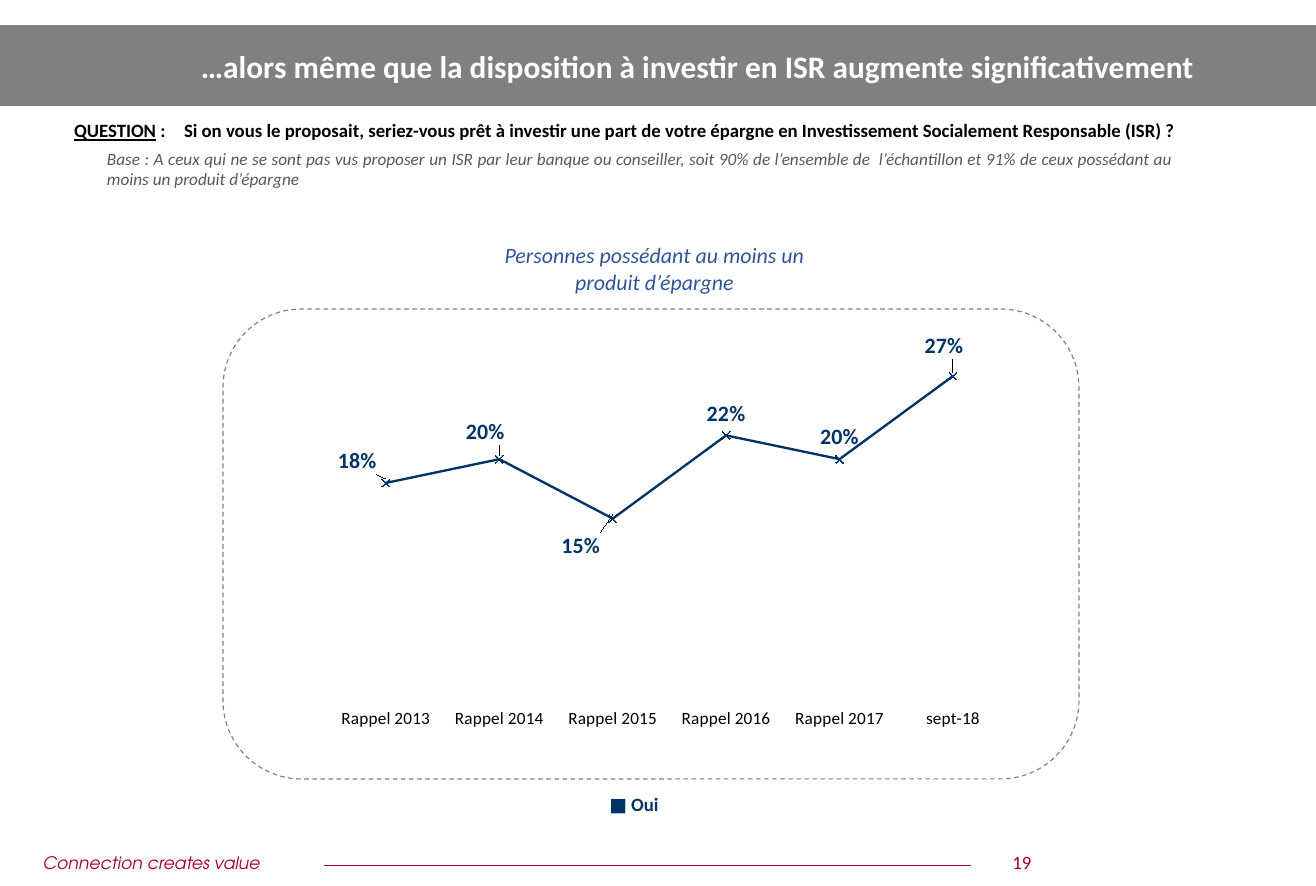
from lxml import etree
from pptx import Presentation
from pptx.chart.data import CategoryChartData
from pptx.dml.color import RGBColor
from pptx.enum.chart import (XL_CHART_TYPE, XL_LABEL_POSITION, XL_MARKER_STYLE,
                             XL_TICK_MARK)
from pptx.enum.dml import MSO_LINE
from pptx.enum.shapes import MSO_CONNECTOR, MSO_SHAPE
from pptx.enum.text import MSO_ANCHOR, PP_ALIGN
from pptx.oxml import parse_xml
from pptx.oxml.ns import nsdecls, qn
from pptx.util import Pt

PX = 8121  # EMU in one px
NAVY, RED, GREY, BLACK = "003366", "A50021", "808080", "000000"
LEFT, CENTER, JUSTIFY = PP_ALIGN.LEFT, PP_ALIGN.CENTER, PP_ALIGN.JUSTIFY

TITLE = "…alors même que la disposition à investir en ISR augmente significativement"
QUESTION = (" :\tSi on vous le proposait, seriez-vous prêt à investir une part de votre "
            "épargne en Investissement Socialement Responsable (ISR) ?")
BASE = ("Base : A ceux qui ne se sont pas vus proposer un ISR par leur banque ou conseiller, "
        "soit 90% de l’ensemble de  l’échantillon et 91% de ceux possédant au moins un "
        "produit d’épargne")
OUI = {"Rappel 2013": 0.18, "Rappel 2014": 0.20, "Rappel 2015": 0.15,
       "Rappel 2016": 0.22, "Rappel 2017": 0.20, "sept-18": 0.27}
# Point index: shift of its label from the place above the point, px
LABEL_SHIFTS = {0: (-29, 0), 1: (-14, -5), 2: (-32, 49), 5: (-9, -8)}

BAND = (0, 25, 1316, 81)
CHART = (239, 312, 820, 475)
PLOT = {"x": 0.11, "y": 0.06, "w": 0.83, "h": 0.75}
FRAME = (223, 309, 856, 470)

# text runs, box, format
TEXTS = [
    (["Connection creates value"], (32, 846, 347, 33),
     dict(size=11, color=RED, italic=True, name="TeX Gyre Adventor")),
    (["19"], (987, 845, 70, 34), dict(size=12, color=RED, align=CENTER)),
    (["QUESTION", QUESTION], (64, 114, 1201, 32),
     dict(size=12, bold=True, align=JUSTIFY, insets=(10, 5, 41, 5), hanging=110,
          underline_first=True)),
    ([BASE], (107, 148, 1067, 42),
     dict(size=11, color="595959", italic=True, align=JUSTIFY, insets=(0, 0, 0, 0))),
    (["Personnes possédant au moins un produit d’épargne"], (482, 236, 345, 64),
     dict(size=14, color="2F5597", italic=True, align=CENTER)),
    (["■ Oui"], (399, 787, 470, 34), dict(size=12, color=NAVY, bold=True, align=CENTER)),
]


def px(*values):
    return [round(v * PX) for v in values]


def rgb(value):
    return RGBColor.from_string(value)


def set_font(font, size, color=BLACK, bold=False, italic=False, name="Calibri"):
    font.size, font.bold, font.italic, font.name = Pt(size), bold, italic, name
    font.color.rgb = rgb(color)


def write(sp, runs, align=LEFT, anchor=MSO_ANCHOR.TOP, insets=(11, 6, 11, 6),
          hanging=0, underline_first=False, **font):
    tf = sp.text_frame
    tf.word_wrap = True
    tf.vertical_anchor = anchor
    tf.margin_left, tf.margin_top, tf.margin_right, tf.margin_bottom = px(*insets)
    p = tf.paragraphs[0]
    p.alignment = align
    if hanging:
        indent = px(hanging)[0]
        pPr = p._p.get_or_add_pPr()
        pPr.set("marL", str(indent))
        pPr.set("indent", str(-indent))
    for i, text in enumerate(runs):
        r = p.add_run()
        r.text = text
        set_font(r.font, **font)
        if underline_first:
            r.font.underline = i == 0


def manual_layout(**values):
    """Chart layout element whose children come in the order given."""
    layout = parse_xml(f"<c:layout {nsdecls('c')}><c:manualLayout/></c:layout>")
    for tag, value in values.items():
        etree.SubElement(layout[0], qn(f"c:{tag}")).set("val", str(value))
    return layout


def add_oui_chart(slide):
    data = CategoryChartData(number_format="0%")
    data.categories = list(OUI)
    data.add_series("Oui", list(OUI.values()))
    chart = slide.shapes.add_chart(XL_CHART_TYPE.LINE_MARKERS, *px(*CHART), data).chart
    chart.has_title = chart.has_legend = False
    set_font(chart.font, 18, name="Cabin")

    plot_area = chart._chartSpace.chart.plotArea
    for old in plot_area.findall(qn("c:layout")):
        plot_area.remove(old)
    plot_area.insert(0, manual_layout(layoutTarget="inner", xMode="edge", yMode="edge", **PLOT))

    years, values = chart.category_axis, chart.value_axis
    years.major_tick_mark = XL_TICK_MARK.OUTSIDE
    years.format.line.fill.background()
    set_font(years.tick_labels.font, 11)
    values.minimum_scale, values.maximum_scale = 0, 0.3
    values.has_major_gridlines = values.visible = False

    chart.plots[0].vary_by_categories = False
    series = chart.plots[0].series[0]
    series.smooth = False
    series.format.line.color.rgb = rgb(NAVY)
    series.format.line.width = Pt(1.5)
    marker = series.marker
    marker.style, marker.size = XL_MARKER_STYLE.X, 5
    marker.format.fill.solid()
    marker.format.fill.fore_color.rgb = rgb(NAVY)
    marker.format.line.color.rgb = rgb(NAVY)

    labels = series.data_labels
    labels.show_value = True
    labels.number_format, labels.number_format_is_linked = "0%", False
    labels.position = XL_LABEL_POSITION.ABOVE
    set_font(labels.font, 14, NAVY, bold=True)
    for i in LABEL_SHIFTS:
        label = series.points[i].data_label
        label.position = XL_LABEL_POSITION.ABOVE
        set_font(label.font, 14, NAVY, bold=True)
    for dLbl in series._element.iter(qn("c:dLbl")):
        idx = dLbl.find(qn("c:idx"))
        dx, dy = LABEL_SHIFTS[int(idx.get("val"))]
        idx.addnext(manual_layout(x=round(dx / CHART[2], 3), y=round(dy / CHART[3], 3)))


def main():
    prs = Presentation()
    prs.slide_width, prs.slide_height = px(1316, 886)
    slide = prs.slides.add_slide(prs.slide_layouts[5])
    shapes = slide.shapes

    band = shapes.add_shape(MSO_SHAPE.RECTANGLE, *px(*BAND))
    band.shadow.inherit = False
    band.fill.solid()
    band.fill.fore_color.rgb = rgb(GREY)
    band.line.fill.background()
    title = shapes.title
    title._element.addprevious(band._element)
    title.left, title.top, title.width, title.height = px(190, 25, 1105, 81)
    write(title, [TITLE], anchor=MSO_ANCHOR.MIDDLE, size=20, color="FFFFFF", bold=True)

    rule = shapes.add_connector(MSO_CONNECTOR.STRAIGHT, *px(324, 865, 971, 865))
    rule.line.color.rgb = rgb(RED)
    rule.line.width = Pt(0.5)
    etree.SubElement(rule._element.spPr, qn("a:effectLst"))

    for runs, box, style in TEXTS:
        write(shapes.add_textbox(*px(*box)), runs, **style)

    add_oui_chart(slide)

    frame = shapes.add_shape(MSO_SHAPE.ROUNDED_RECTANGLE, *px(*FRAME))
    frame.shadow.inherit = False
    frame.fill.background()
    frame.line.color.rgb = rgb(GREY)
    frame.line.width = Pt(0.75)
    frame.line.dash_style = MSO_LINE.DASH

    prs.save("out.pptx")


if __name__ == "__main__":
    main()
